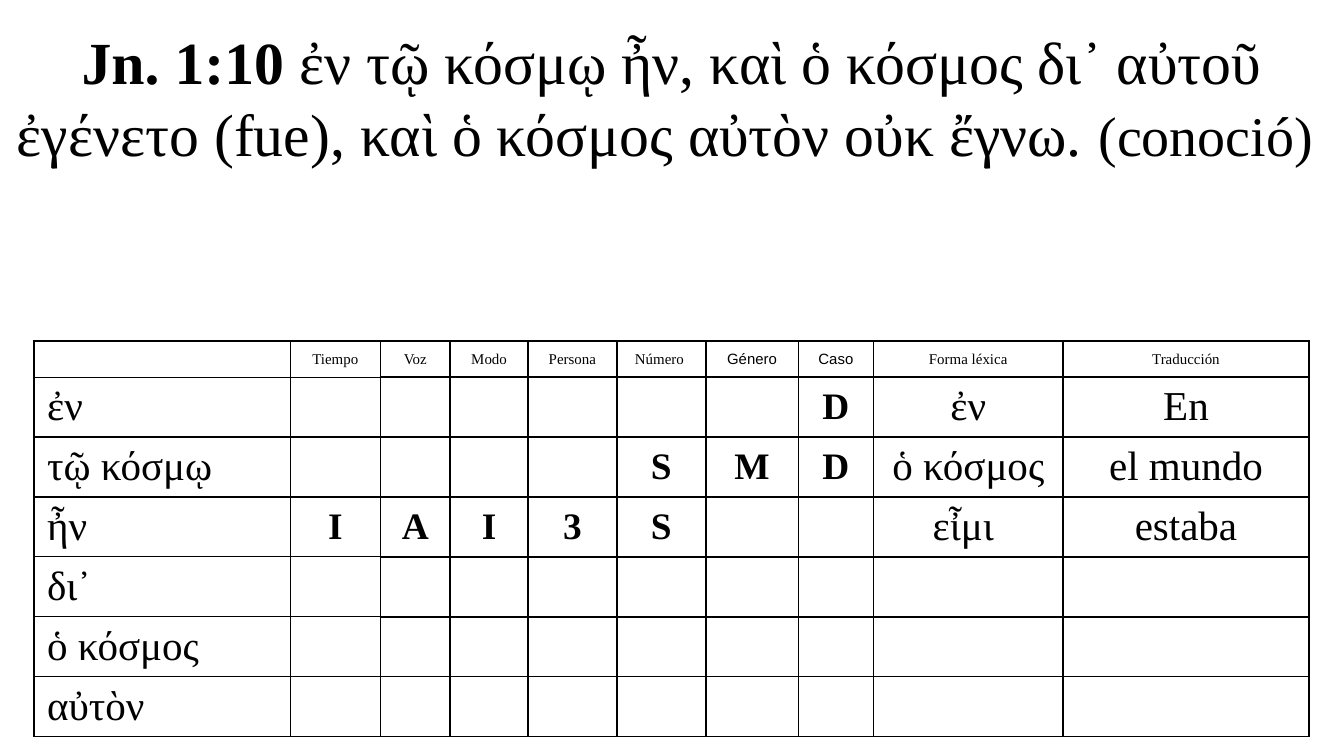
import lxml.etree
import pptx
import pptx.dml.color
import pptx.enum.text
import pptx.oxml.ns
import pptx.util

Cm = pptx.util.Cm
Pt = pptx.util.Pt
ALIGN = pptx.enum.text.PP_ALIGN
MIDDLE = pptx.enum.text.MSO_ANCHOR.MIDDLE
qn = pptx.oxml.ns.qn

COLORS = {"ink": "000000"}
SERIF = "Times New Roman"
SANS = "Arial"

VERSE = [
    ("Jn. 1:10", 32, True),
    (" ἐν τῷ κόσμῳ ἦν, καὶ ὁ κόσμος δι᾿ αὐτοῦ ἐγένετο (fue), "
     "καὶ ὁ κόσμος αὐτὸν οὐκ ἔγνω. ", 32, False),
    ("(conoció) ", 30, False),
]
PARSING = [
    ["", "Tiempo", "Voz", "Modo", "Persona", "Número ", "Género", "Caso",
     "Forma léxica", "Traducción"],
    ["ἐν", "", "", "", "", "", "", "D", "ἐν", "En"],
    ["τῷ κόσμῳ", "", "", "", "", "S", "M", "D", "ὁ κόσμος", "el mundo"],
    ["ἦν", "I", "A", "I", "3", "S", "", "", "εἶμι ", "estaba"],
    ["δι᾿"] + [""] * 9,
    ["ὁ κόσμος"] + [""] * 9,
    ["αὐτὸν"] + [""] * 9,
]
COLUMN_WIDTHS = [4.85, 1.7, 1.32, 1.47, 1.68, 1.68, 1.75, 1.42, 3.58, 4.65]
HEADER_HEIGHT = 0.68
WORD_HEIGHT = 1.12
CODE_COLUMNS = range(1, 8)


def add_run(paragraph, text, size, bold=False, font=SERIF):
    run = paragraph.add_run()
    run.text = text
    run.font.name = font
    run.font.size = Pt(size)
    run.font.bold = bold
    run.font.color.rgb = pptx.dml.color.RGBColor.from_string(COLORS["ink"])


def add_verse(slide):
    verse = slide.shapes.add_textbox(Cm(0), Cm(0.33), Cm(25.4), Cm(3))
    verse.text_frame.word_wrap = True
    verse.text_frame.vertical_anchor = MIDDLE
    paragraph = verse.text_frame.paragraphs[0]
    paragraph.alignment = ALIGN.CENTER
    for text, size, bold in VERSE:
        add_run(paragraph, text, size, bold)


def set_borders(cell, widths):
    properties = cell._tc.get_or_add_tcPr()
    for side, width in zip("LRTB", widths):
        line = lxml.etree.SubElement(properties, qn(f"a:ln{side}"), w=str(Pt(width)))
        fill = lxml.etree.SubElement(line, qn("a:solidFill"))
        lxml.etree.SubElement(fill, qn("a:srgbClr"), val=COLORS["ink"])


def border_widths(row, column):
    if column > 1:
        return 1, 1, 1, 1
    return 1, 1, 0.75 if row else 1, 0.75


def text_style(row, column):
    if row == 0:
        return 8, False, SANS if column in (6, 7) else SERIF
    if column in CODE_COLUMNS:
        return 20, True, SERIF
    return 22, False, SERIF


def fill_cell(cell, row, column, text):
    set_borders(cell, border_widths(row, column))
    cell.fill.background()
    cell.vertical_anchor = MIDDLE
    cell.margin_left = cell.margin_right = Cm(0.25)
    cell.margin_top = cell.margin_bottom = Cm(0.1)
    paragraph = cell.text_frame.paragraphs[0]
    paragraph.alignment = ALIGN.LEFT if column == 0 else ALIGN.CENTER
    size, bold, font = text_style(row, column)
    if text:
        add_run(paragraph, text, size, bold, font)
    else:
        lxml.etree.SubElement(paragraph._p, qn("a:endParaRPr"), sz=str(size * 100))


def add_parsing_table(slide):
    heights = [HEADER_HEIGHT] + [WORD_HEIGHT] * (len(PARSING) - 1)
    table = slide.shapes.add_table(
        len(heights), len(COLUMN_WIDTHS), Cm(0.64), Cm(6.45),
        Cm(sum(COLUMN_WIDTHS)), Cm(sum(heights))).table
    table.first_row = False
    table.horz_banding = False
    for column, width in zip(table.columns, COLUMN_WIDTHS):
        column.width = Cm(width)
    for row, height in zip(table.rows, heights):
        row.height = Cm(height)
    for r, words in enumerate(PARSING):
        for c, text in enumerate(words):
            fill_cell(table.cell(r, c), r, c, text)


def main():
    deck = pptx.Presentation()
    deck.slide_width = Cm(25.4)
    deck.slide_height = Cm(14.29)
    slide = deck.slides.add_slide(deck.slide_layouts[6])
    add_verse(slide)
    add_parsing_table(slide)
    deck.save("out.pptx")


if __name__ == "__main__":
    main()
